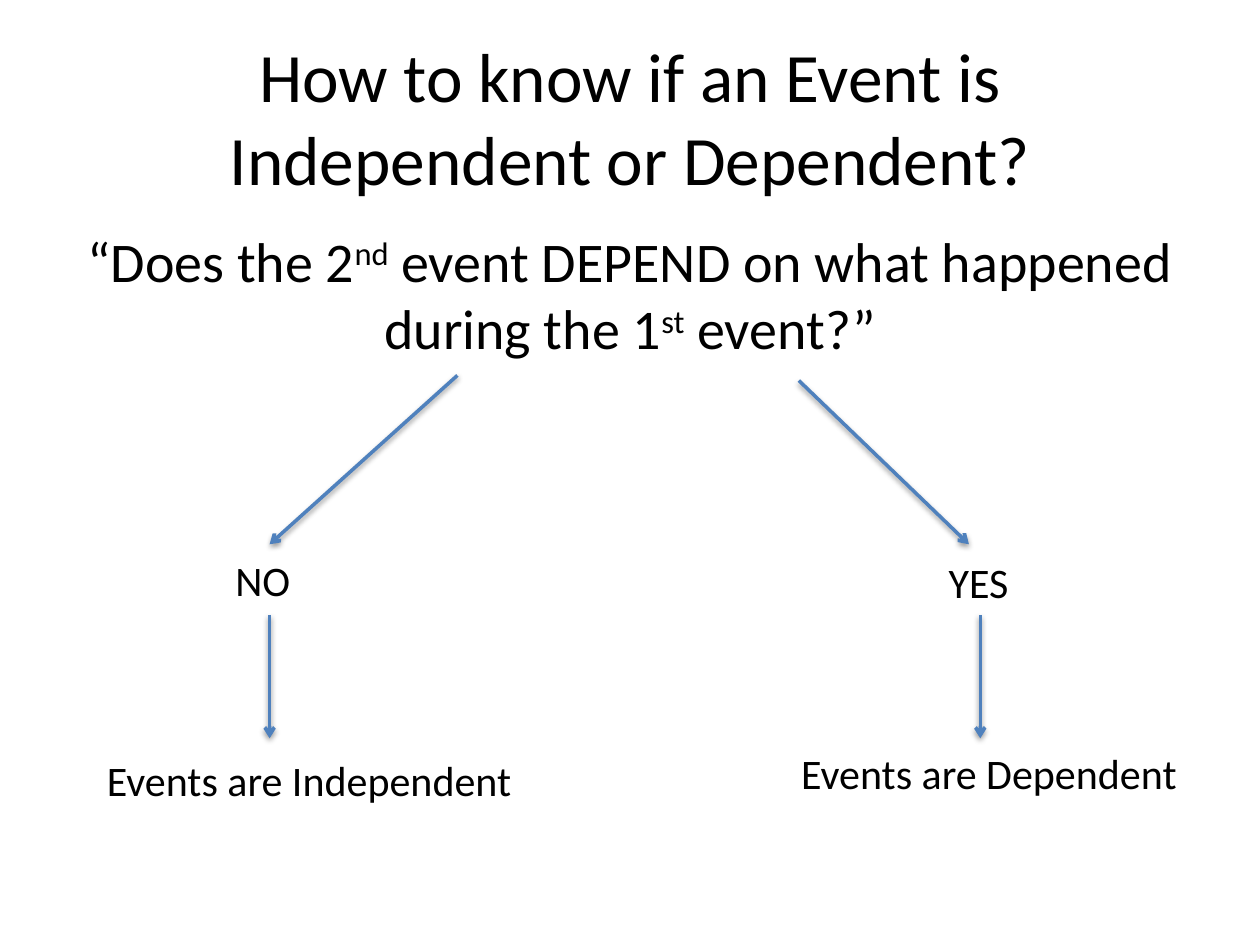
"""Build a slide with a decision tree for independent and dependent events."""
from lxml.etree import SubElement
from pptx import Presentation
from pptx.dml.color import RGBColor
from pptx.enum.shapes import MSO_CONNECTOR
from pptx.enum.text import MSO_ANCHOR, MSO_AUTO_SIZE, PP_ALIGN
from pptx.oxml.ns import qn
from pptx.util import Inches, Pt


def paint(color_format, hex_color):
    color_format.rgb = RGBColor.from_string(hex_color)


def write(paragraph, text, size, baseline=0):
    run = paragraph.add_run()
    run.text = text
    for name, value in {"name": "Calibri", "size": Pt(size)}.items():
        setattr(run.font, name, value)
    paint(run.font.color, "000000")
    if baseline:
        run.font._element.set("baseline", str(baseline * 1000))


deck = Presentation()
deck.slide_width, deck.slide_height = Inches(10), Inches(7.5)
column, row = deck.slide_width / 100, deck.slide_height / 100
slide = deck.slides.add_slide(deck.slide_layouts[1])
heading, question = slide.shapes.title, slide.placeholders[1]

for placeholder, top, height, anchor in (
    (heading, 4, 16.67, MSO_ANCHOR.MIDDLE),
    (question, 23.33, 66, MSO_ANCHOR.TOP),
):
    box = {"left": 5 * column, "top": top * row, "width": 90 * column, "height": height * row}
    for name, value in box.items():
        setattr(placeholder, name, int(value))
    frame_format = {"word_wrap": True, "auto_size": MSO_AUTO_SIZE.NONE, "vertical_anchor": anchor}
    for name, value in frame_format.items():
        setattr(placeholder.text_frame, name, value)
    placeholder.text_frame.paragraphs[0].alignment = PP_ALIGN.CENTER

write(heading.text_frame.paragraphs[0], "How to know if an Event is Independent or Dependent?", 39.6)

question_line = question.text_frame.paragraphs[0]
question_format = question_line._p.get_or_add_pPr()
for name in ("marL", "indent"):
    question_format.set(name, "0")
SubElement(question_format, qn("a:buNone"))
for words, baseline in (
    ("“Does the 2", 0),
    ("nd", 30),
    (" event DEPEND on what happened during the 1", 0),
    ("st", 30),
    (" event?”", 0),
):
    write(question_line, words, 32, baseline)

for start_x, start_y, end_x, end_y in (
    (36.3, 39.73, 21.4, 57.6),
    (63.4, 40.27, 76.9, 57.6),
    (21.4, 65.07, 21.4, 78.13),
    (77.8, 65.07, 77.8, 78.13),
):
    branch = slide.shapes.add_connector(
        MSO_CONNECTOR.STRAIGHT,
        int(start_x * column), int(start_y * row), int(end_x * column), int(end_y * row),
    )
    branch.line.width = Pt(2)
    paint(branch.line.color, "4F81BD")
    SubElement(branch.line._get_or_add_ln(), qn("a:tailEnd"), type="arrow")

for answer, left, top, width in (
    ("NO", 17.7, 58, 6.4),
    ("YES", 74.3, 58.27, 6.8),
    ("Events are Independent", 7.5, 79.2, 34.7),
    ("Events are Dependent", 62.6, 78.4, 32.3),
):
    label = slide.shapes.add_textbox(
        int(left * column), int(top * row), int(width * column), int(6.67 * row)
    )
    for name, value in {"word_wrap": False, "auto_size": MSO_AUTO_SIZE.SHAPE_TO_FIT_TEXT}.items():
        setattr(label.text_frame, name, value)
    write(label.text_frame.paragraphs[0], answer, 24)

deck.save("out.pptx")
